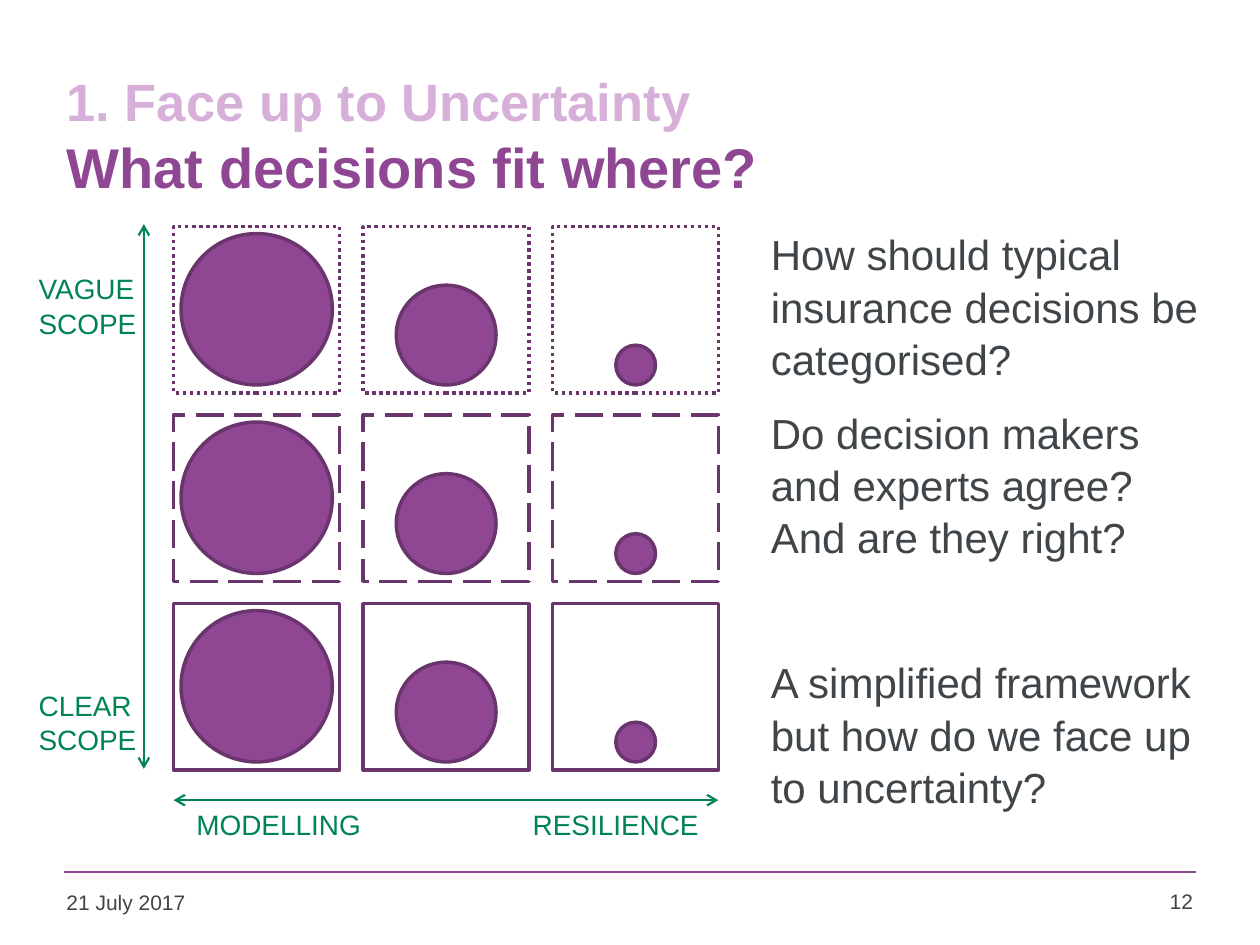
from lxml.etree import SubElement
from pptx import Presentation
from pptx.dml.color import RGBColor as RGB
from pptx.enum.dml import MSO_LINE_DASH_STYLE as Dash
from pptx.enum.shapes import MSO_CONNECTOR as Connector, MSO_SHAPE as Shape
from pptx.enum.text import MSO_ANCHOR as Anchor, MSO_AUTO_SIZE as AutoSize, PP_ALIGN as Align
from pptx.oxml.ns import qn
from pptx.util import Cm, Pt

THEME = {
    "font": "Arial",
    "purple": RGB.from_string("8F4693"),
    "outline": RGB.from_string("6A346D"),
    "lilac": RGB.from_string("D7B0D9"),
    "green": RGB.from_string("008452"),
    "grey": RGB.from_string("3F4548"),
    "section": Pt(30),
    "heading": Pt(32),
    "body": Pt(24),
    "label": Pt(16),
    "footer": Pt(12),
}


def write(paragraph, text, size, color, bold=False):
    run = paragraph.add_run()
    run.text = text
    for name, value in {"name": THEME["font"], "size": THEME[size], "bold": bold}.items():
        setattr(run.font, name, value)
    run.font.color.rgb = THEME[color]


def draw_line(start, end, color, width, arrows=False):
    line = slide.shapes.add_connector(Connector.STRAIGHT, *map(Cm, start + end))
    line.line.color.rgb = THEME[color]
    line.line.width = Pt(width)
    SubElement(line._element.spPr, qn("a:effectLst"))
    if arrows:
        for tip in ("a:headEnd", "a:tailEnd"):
            SubElement(line.line._get_or_add_ln(), qn(tip), type="arrow")


deck = Presentation()
deck.slide_width, deck.slide_height = Cm(25.4), Cm(19.05)
slide = deck.slides.add_slide(deck.slide_layouts[5])

title = slide.shapes.title
title_place = {"left": Cm(1.09), "top": Cm(1.12), "width": Cm(23.04), "height": Cm(3.18)}
for name, value in title_place.items():
    setattr(title, name, value)
title_format = {"word_wrap": True, "auto_size": AutoSize.NONE, "vertical_anchor": Anchor.MIDDLE}
for name, value in title_format.items():
    setattr(title.text_frame, name, value)
heading = title.text_frame.paragraphs[0]
heading.alignment = Align.LEFT
write(heading, "1. Face up to Uncertainty", "section", "lilac", True)
heading.add_line_break()
write(heading, "What decisions fit where?", "heading", "purple", True)

draw_line((1.3, 17.58), (24.1, 17.58), "purple", 1)

grid_left, grid_top = 3.5, 4.57
cell, column_step, row_step, margin = 3.35, 3.82, 3.8, 0.16
diameters = (3.05, 2.01, 0.8)
scope_dashes = (Dash.ROUND_DOT, Dash.LONG_DASH, Dash.SOLID)

for row, dash in enumerate(scope_dashes):
    for column, diameter in enumerate(diameters):
        left = grid_left + column * column_step
        top = grid_top + row * row_step
        frame = slide.shapes.add_shape(Shape.RECTANGLE, Cm(left), Cm(top), Cm(cell), Cm(cell))
        frame.fill.background()
        circle = slide.shapes.add_shape(
            Shape.OVAL,
            Cm(left + (cell - diameter) / 2),
            Cm(top + cell - margin - diameter),
            Cm(diameter),
            Cm(diameter),
        )
        circle.fill.solid()
        circle.fill.fore_color.rgb = THEME["purple"]
        for outlined in (frame, circle):
            outlined.shadow.inherit = False
            outlined.line.color.rgb = THEME["outline"]
            outlined.line.width = Pt(2)
        frame.line.dash_style = dash

draw_line((3.5, 16.13), (14.48, 16.13), "green", 1.25, True)
draw_line((2.9, 4.52), (2.9, 15.5), "green", 1.25, True)

questions = (
    ("How should typical insurance decisions be categorised?", 0),
    ("Do decision makers and experts agree? And are they right?", 12),
    ("A simplified framework but how do we face up to uncertainty?", 53),
)
text_blocks = (
    ((15.29, 4.45, 9.2, 12.09), questions, "body", "grey", Align.LEFT, 1.04),
    ((0.53, 5.33, 3.99, 1.04), (("VAGUE SCOPE", 0),), "label", "green", Align.LEFT, 1.04),
    ((0.53, 13.72, 3.99, 1.04), (("CLEAR SCOPE", 0),), "label", "green", Align.LEFT, 1.04),
    ((3.71, 16.13, 3.99, 1.04), (("MODELLING", 0),), "label", "green", Align.LEFT, 1.04),
    ((10.49, 16.13, 3.99, 1.04), (("RESILIENCE", 0),), "label", "green", Align.LEFT, 1.04),
    ((1.09, 17.81, 5.59, 0.91), (("21 July 2017", 0),), "footer", "grey", Align.LEFT, 1.0),
    ((22.5, 17.78, 1.8, 0.94), (("12", 0),), "footer", "grey", Align.RIGHT, 1.0),
)
for place, lines, size, color, align, spacing in text_blocks:
    words = slide.shapes.add_textbox(*map(Cm, place)).text_frame
    words.word_wrap = True
    for index, (text, gap) in enumerate(lines):
        paragraph = words.add_paragraph() if index else words.paragraphs[0]
        layout = {"alignment": align, "line_spacing": spacing, "space_before": Pt(gap)}
        for name, value in layout.items():
            setattr(paragraph, name, value)
        write(paragraph, text, size, color)

deck.save("out.pptx")
